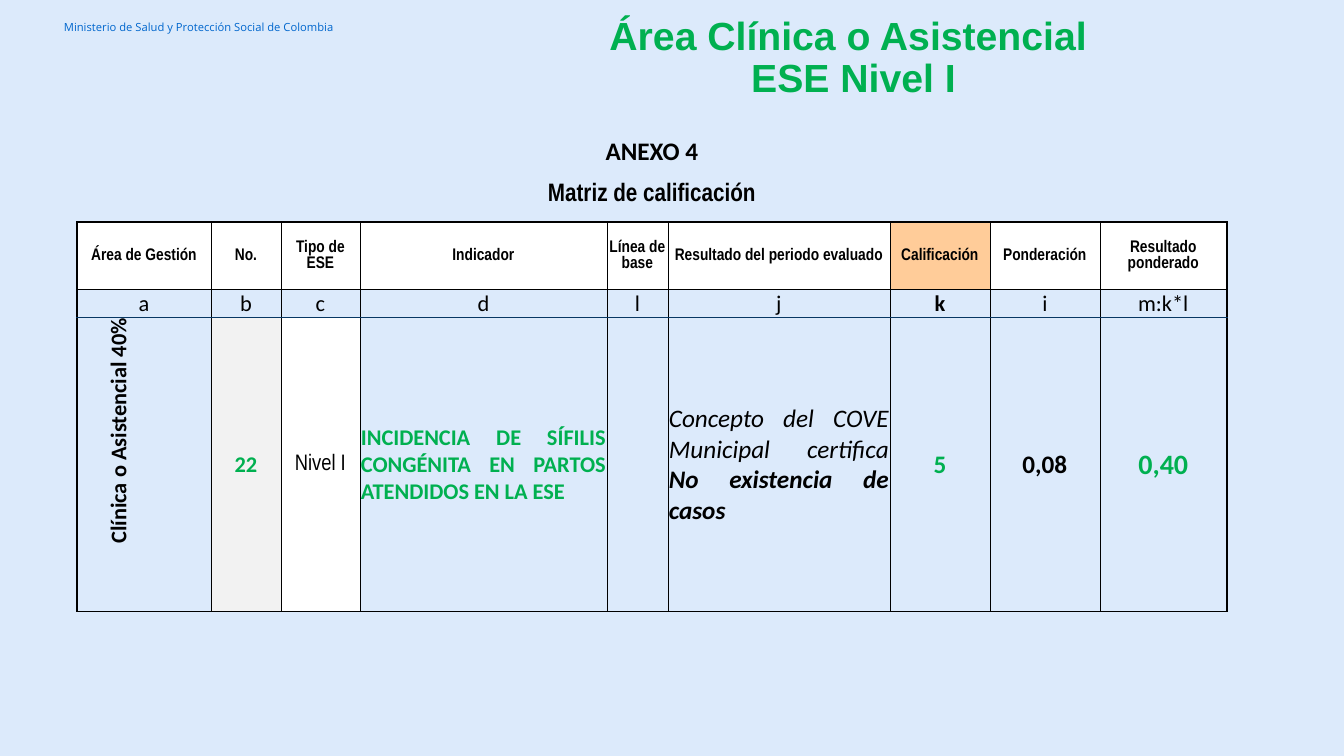
from lxml import etree
from pptx import Presentation
from pptx.dml.color import RGBColor
from pptx.enum.text import MSO_ANCHOR, PP_ALIGN
from pptx.oxml.ns import qn
from pptx.util import Emu, Pt

CENTER, RIGHT, JUSTIFY = PP_ALIGN.CENTER, PP_ALIGN.RIGHT, PP_ALIGN.JUSTIFY
MIDDLE = MSO_ANCHOR.MIDDLE

COLORS = {
    "background": "DCEAFB", "ministry": "0066CD", "green": "00B050",
    "black": "000000", "white": "FFFFFF", "orange": "FFCC99",
    "gray": "F2F2F2", "navy": "073763",
}

# Content
MINISTRY = "Ministerio de Salud y Protección Social de Colombia"
TITLE = ["Área Clínica o Asistencial ", "ESE Nivel I"]
CAPTIONS = [("ANEXO 4", "Calibri"), ("Matriz de calificación", "Arial Narrow")]
HEADINGS = ["Área de Gestión", "No.", "Tipo de ESE", "Indicador", "Línea de base",
            "Resultado del periodo evaluado", "Calificación", "Ponderación",
            "Resultado ponderado"]
LETTERS = ["a", "b", "c", "d", "l", "j", "k", "i", "m:k*l"]
# Each entry: runs of (text, bold), size, color, alignment
RESULTS = [
    ([("Clínica o Asistencial 40%", True)], 16, "black", RIGHT),
    ([("22", True)], 16, "green", CENTER),
    ([("Nivel I", False)], 16, "black", CENTER),
    ([("INCIDENCIA DE SÍFILIS CONGÉNITA EN PARTOS ATENDIDOS EN LA ESE", True)],
     16, "green", JUSTIFY),
    ([], 16, "black", CENTER),
    ([("Concepto del COVE Municipal certifica ", False),
      ("No existencia de casos", True)], 18, "black", JUSTIFY),
    ([("5", True)], 18, "green", CENTER),
    ([("0,08", True)], 18, "black", CENTER),
    ([("0,40", True)], 20, "green", CENTER),
]
AREA, TYPE, CONCEPT, RATING = 0, 2, 5, 6

# Geometry in px
SLIDE_SIZE = (1344, 756)
MINISTRY_BOX = (54, 14, 315, 26)
TITLE_BOX = (424, 23, 859, 71)
TABLE_ORIGIN = (77, 135)
COLUMN_WIDTHS = [134, 70, 79, 247, 61, 222, 100, 110, 127]
ROW_HEIGHTS = [31, 56, 67, 28, 294]
CAPTION_ROWS, HEADING_ROW, LETTER_ROW, RESULT_ROW = (0, 1), 2, 3, 4
LAST_COLUMN = len(COLUMN_WIDTHS) - 1


def px(value):
    return Emu(round(value * 914400 / 100.8))


def color(name):
    return RGBColor.from_string(COLORS[name])


def write(paragraph, runs, size, tint, font, align=None, italic=False):
    paragraph.alignment = align
    paragraph.font.size = Pt(size)
    for text, bold in runs:
        run = paragraph.add_run()
        run.text = text
        run.font.size, run.font.name = Pt(size), font
        run.font.bold, run.font.italic = bold, italic
        run.font.color.rgb = color(tint)


def add_text(slide, box, lines, size, tint, font, bold=False, align=None, spacing=None):
    frame = slide.shapes.add_textbox(*map(px, box)).text_frame
    frame.word_wrap = True
    frame.vertical_anchor = MIDDLE
    for number, line in enumerate(lines):
        paragraph = frame.add_paragraph() if number else frame.paragraphs[0]
        write(paragraph, [(line, bold)], size, tint, font, align)
        paragraph.line_spacing = spacing


def set_borders(cell, borders):
    """Draw left, right, top and bottom edges; None hides an edge."""
    properties = cell._tc.get_or_add_tcPr()
    for side, edge in zip("LRTB", borders):
        line = etree.SubElement(properties, qn(f"a:ln{side}"))
        if edge is None:
            etree.SubElement(line, qn("a:noFill"))
            continue
        tint, width = edge
        line.set("w", str(Pt(width)))
        fill = etree.SubElement(line, qn("a:solidFill"))
        etree.SubElement(fill, qn("a:srgbClr")).set("val", COLORS[tint])


def borders_for(row, column):
    thin, thick, divider = ("black", 0.5), ("black", 1.5), ("navy", 0.75)
    if row in CAPTION_ROWS:
        return None, None, None, thick if row == CAPTION_ROWS[-1] else None
    top, bottom = {HEADING_ROW: (thick, thin), LETTER_ROW: (thin, divider),
                   RESULT_ROW: (divider, ("black", 1))}[row]
    return (thick if column == 0 else thin,
            thick if column == LAST_COLUMN else thin, top, bottom)


def fill_for(row, column):
    if row == HEADING_ROW:
        return "orange" if column == RATING else "white"
    return {(RESULT_ROW, 1): "gray", (RESULT_ROW, TYPE): "white"}.get((row, column))


def add_matrix(slide):
    frame = slide.shapes.add_table(
        len(ROW_HEIGHTS), len(COLUMN_WIDTHS), *map(px, TABLE_ORIGIN),
        px(sum(COLUMN_WIDTHS)), px(sum(ROW_HEIGHTS)))
    table = frame.table
    table.first_row = table.horz_banding = False
    for column, width in zip(table.columns, COLUMN_WIDTHS):
        column.width = px(width)
    for row, height in zip(table.rows, ROW_HEIGHTS):
        row.height = px(height)

    # Cell frames
    for row in range(len(ROW_HEIGHTS)):
        for column in range(len(COLUMN_WIDTHS)):
            cell = table.cell(row, column)
            cell.vertical_anchor = MIDDLE
            cell.margin_left = cell.margin_right = cell.margin_top = px(1)
            cell.margin_bottom = 0
            set_borders(cell, borders_for(row, column))
            tint = fill_for(row, column)
            if tint:
                cell.fill.solid()
                cell.fill.fore_color.rgb = color(tint)
            else:
                cell.fill.background()

    def write_cell(row, column, *args, **options):
        write(table.cell(row, column).text_frame.paragraphs[0], *args, **options)

    # Captions above the grid
    for row, (caption, font) in zip(CAPTION_ROWS, CAPTIONS):
        table.cell(row, 0).merge(table.cell(row, LAST_COLUMN))
        write_cell(row, 0, [(caption, True)], 18, "black", font, CENTER)

    # Headings, column letters and results
    for column, (heading, letter, result) in enumerate(zip(HEADINGS, LETTERS, RESULTS)):
        write_cell(HEADING_ROW, column, [(heading, True)], 12, "black",
                   "Arial Narrow", CENTER)
        write_cell(LETTER_ROW, column, [(letter, column == RATING)], 16, "black",
                   "Calibri", CENTER)
        runs, size, tint, align = result
        font = "Arial Narrow" if column == TYPE else "Calibri"
        write_cell(RESULT_ROW, column, runs, size, tint, font, align,
                   italic=column == CONCEPT)

    area = table.cell(RESULT_ROW, AREA)
    area.margin_top = px(28)
    area._tc.get_or_add_tcPr().set("vert", "vert270")


def main():
    deck = Presentation()
    deck.slide_width, deck.slide_height = map(px, SLIDE_SIZE)
    slide = deck.slides.add_slide(deck.slide_layouts[6])
    slide.background.fill.solid()
    slide.background.fill.fore_color.rgb = color("background")

    add_text(slide, MINISTRY_BOX, [MINISTRY], 8, "ministry", "Open Sans")
    add_text(slide, TITLE_BOX, TITLE, 28, "green", "Arial", True, CENTER, 0.9)
    add_matrix(slide)
    deck.save("out.pptx")


if __name__ == "__main__":
    main()
